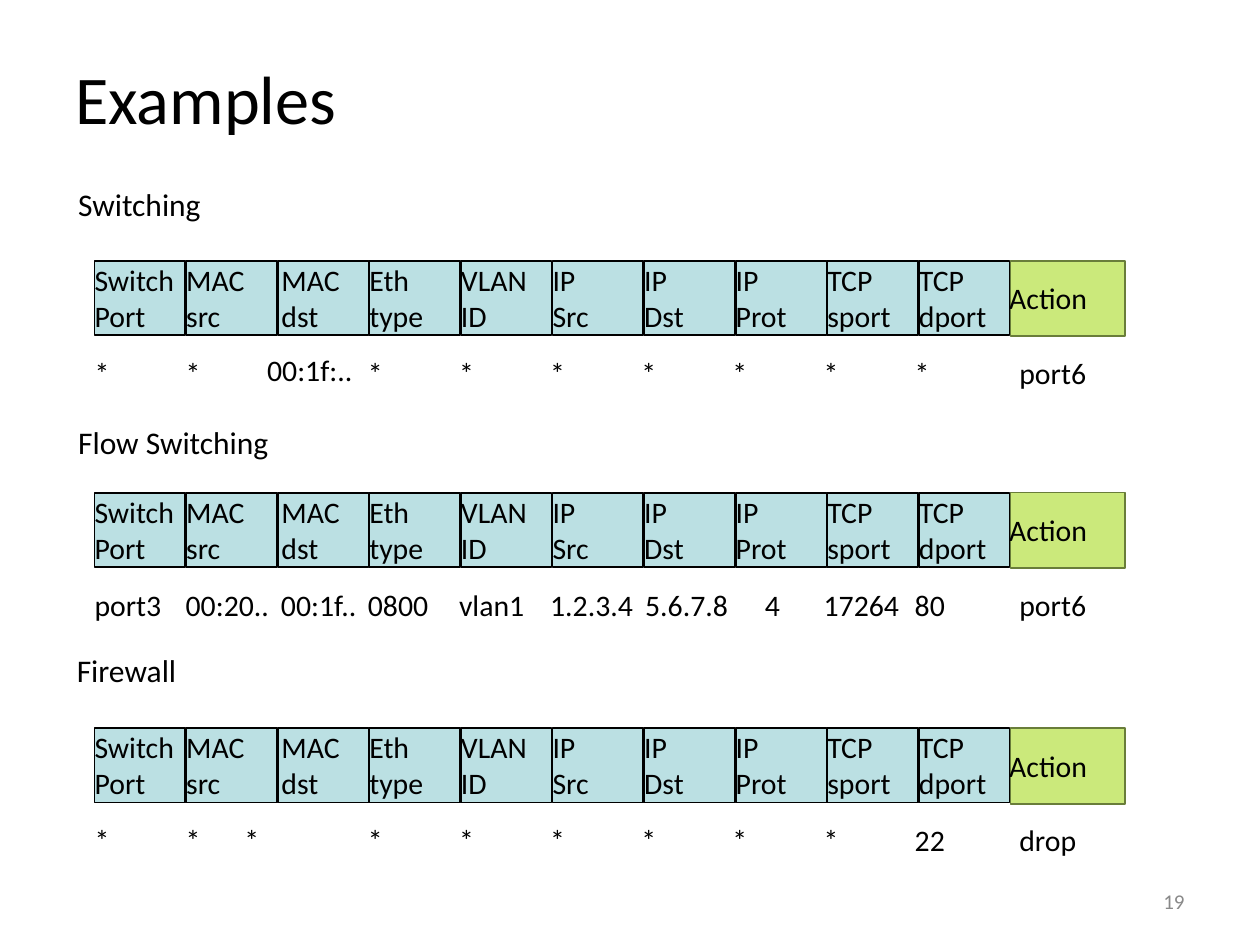
from pptx import Presentation
from pptx.dml.color import RGBColor as RGB
from pptx.enum.shapes import MSO_SHAPE as Shape
from pptx.enum.text import MSO_ANCHOR as Anchor, MSO_AUTO_SIZE as Fit, PP_ALIGN as Align
from pptx.util import Inches, Pt

COLORS = {
    "ink": "000000",
    "page": "898989",
    "field": "BBE0E3",
    "action": "CBE97B",
    "edge": "697D3A",
}

# Header fields, each with its two lines
FIELDS = [
    ("Switch", "Port"), ("MAC", "src"), ("MAC", "dst"), ("Eth", "type"), ("VLAN", "ID"),
    ("IP", "Src"), ("IP", "Dst"), ("IP", "Prot"), ("TCP", "sport"), ("TCP", "dport"),
]
LEFT, ACTION_X = 0.75, 8.02
PITCH = (ACTION_X - LEFT) / len(FIELDS)
VALUE_STEP = (7.26 - LEFT) / (len(FIELDS) - 1)
CELL_W, CELL_H = 0.72, 0.59
NUDGE = {2: 0.03}  # label offset by column

# "moved" gives left, width and vertical shift of values that leave the grid
TABLES = [
    dict(name="Switching", head=(0.62, 1.47, 0.98), top=2.07, act="port6",
         vals=["*", "*", "00:1f:..", "*", "*", "*", "*", "*", "*", "*"],
         moved={2: (2.12, 1.24, -0.02)}),
    dict(name="Flow Switching", head=(0.62, 3.36, 1.52), top=3.91, act="port6",
         vals=["port3", "00:20..", "00:1f..", "0800", "vlan1",
               "1.2.3.4", "5.6.7.8", "4", "17264", "80"],
         moved={2: (2.23, 0.95, 0), 6: (5.12, 0.72, 0), 7: (6.07, 0.72, 0)}),
    dict(name="Firewall", head=(0.61, 5.17, 0.8), top=5.78, act="drop",
         vals=["*", "*", "*", "*", "*", "*", "*", "*", "*", "22"],
         moved={2: (1.94, 1.24, 0)}),
]


def rgb(key):
    return RGB.from_string(COLORS[key])


def write(frame, text, size=17, color="ink", font="Calibri", align=Align.LEFT,
          wrap=True, inset=True):
    """Fill a text frame, one paragraph for each line of text."""
    frame.word_wrap = wrap
    frame.auto_size = Fit.NONE if wrap else Fit.SHAPE_TO_FIT_TEXT
    frame.vertical_anchor = Anchor.MIDDLE
    if not inset:
        frame.margin_left = frame.margin_right = 0
        frame.margin_top = frame.margin_bottom = 0
    for i, line in enumerate(text.split("\n")):
        para = frame.add_paragraph() if i else frame.paragraphs[0]
        para.alignment = align
        run = para.add_run()
        run.text = line
        run.font.name, run.font.size = font, Pt(size)
        run.font.color.rgb = rgb(color)


class Deck:
    """Holds the text style and the current slide."""

    def __init__(self, slide, font="Calibri", size=17):
        self.slide, self.font, self.size = slide, font, size

    def label(self, text, x, y, w, h, host=None, **fmt):
        box = (host or self.slide).shapes.add_textbox(
            Inches(x), Inches(y), Inches(w), Inches(h))
        write(box.text_frame, text, **{"font": self.font, "size": self.size, **fmt})

    def cell(self, host, x, y, w, h, fill, edge):
        rect = host.shapes.add_shape(
            Shape.RECTANGLE, Inches(x), Inches(y), Inches(w), Inches(h))
        rect.shadow.inherit = False
        rect.fill.solid()
        rect.fill.fore_color.rgb = rgb(fill)
        rect.line.color.rgb = rgb(edge)
        rect.line.width = Pt(1)

    def header(self, top):
        group = self.slide.shapes.add_group_shape()
        for i, lines in enumerate(FIELDS):
            x, shift = LEFT + i * PITCH, NUDGE.get(i, 0)
            self.cell(group, x, top, CELL_W, CELL_H, "field", "ink")
            self.label("\n".join(lines), x + shift, top - 0.02, CELL_W - shift, 0.62,
                       host=group, inset=False)
        self.cell(group, ACTION_X, top, 0.91, 0.6, "action", "edge")
        self.label("Action", ACTION_X - 0.01, top + 0.12, 0.92, 0.35,
                   host=group, inset=False)

    def values(self, top, vals, moved, act):
        y = top + 0.71
        for i, val in enumerate(vals):
            x, w, shift = moved.get(i, (LEFT + i * VALUE_STEP, CELL_W, 0))
            self.label(val, x, y + shift, w, 0.35, inset=False)
        self.label(act, 8.09, y, CELL_W, 0.35, inset=False)

    def table(self, name, head, top, vals, moved, act):
        """Draw a heading, the field header and the row of values."""
        x, y, w = head
        self.label(name, x, y, w, 0.3, size=18, wrap=False, inset=False)
        self.header(top)
        self.values(top, vals, moved, act)


def main():
    prs = Presentation()
    prs.slide_width, prs.slide_height = Inches(10), Inches(7.5)
    deck = Deck(prs.slides.add_slide(prs.slide_layouts[6]))
    deck.label("Examples", 0.5, 0.27, 9, 1, size=39)
    for table in TABLES:
        deck.table(**table)
    deck.label("19", 7.17, 6.95, 2.33, 0.4, size=12, color="page", align=Align.RIGHT)
    prs.save("out.pptx")


if __name__ == "__main__":
    main()
